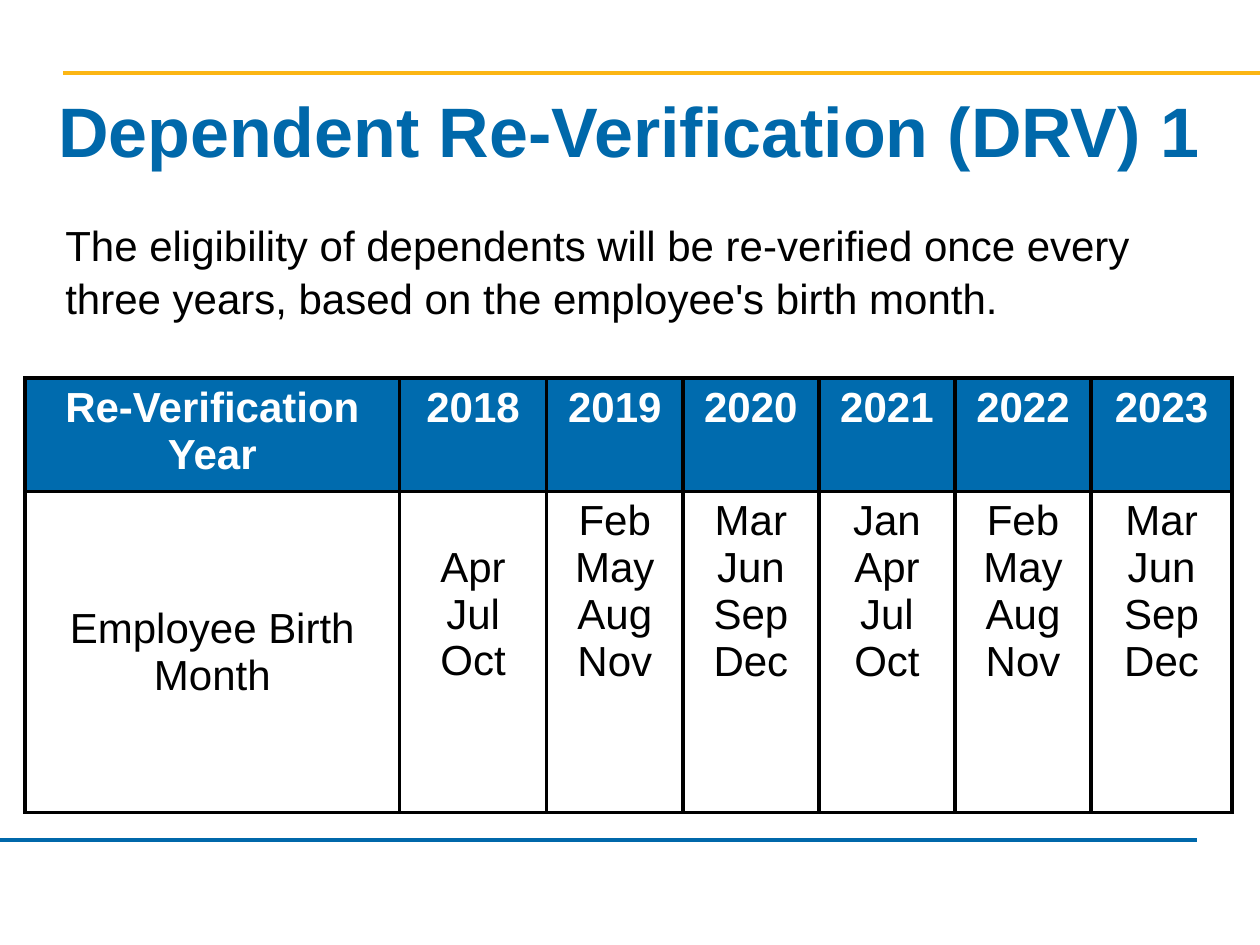
import pptx
import pptx.util
import pptx.dml.color
import pptx.enum.shapes
import pptx.enum.text
import pptx.oxml
import pptx.oxml.ns

GOLD = pptx.dml.color.RGBColor(0xFC, 0xB6, 0x14)
BLUE = pptx.dml.color.RGBColor(0x00, 0x68, 0xAA)
HEADER_BLUE = pptx.dml.color.RGBColor(0x00, 0x6B, 0xAE)
BLACK = pptx.dml.color.RGBColor(0x00, 0x00, 0x00)
WHITE = pptx.dml.color.RGBColor(0xFF, 0xFF, 0xFF)

FONT = "Arial"
WIDTH = pptx.util.Inches(10)
HEIGHT = pptx.util.Inches(7.5)
RULE = pptx.util.Pt(2.25)
CENTER = pptx.enum.text.PP_ALIGN.CENTER
LEFT = pptx.enum.text.PP_ALIGN.LEFT
MIDDLE = pptx.enum.text.MSO_ANCHOR.MIDDLE
TOP = pptx.enum.text.MSO_ANCHOR.TOP

YEARS = range(2018, 2024)
QUARTER_MONTHS = [
    ["Jan", "Apr", "Jul", "Oct"],
    ["Feb", "May", "Aug", "Nov"],
    ["Mar", "Jun", "Sep", "Dec"],
]
COLUMN_SHARES = [29.7, 11.7, 10.8, 10.8, 10.8, 10.8, 11.2]
ROW_SHARES = [11.33, 34]


def across(percent):
    return round(WIDTH * percent / 100)


def down(percent):
    return round(HEIGHT * percent / 100)


def place(left, top, width, height):
    return across(left), down(top), across(width), down(height)


def write(tf, text, size, color, bold=False, align=CENTER):
    tf.text = text
    for p in tf.paragraphs:
        p.alignment = align
        for r in p.runs:
            r.font.name = FONT
            r.font.size = pptx.util.Pt(size)
            r.font.bold = bold
            r.font.color.rgb = color


def add_rule(s, left, right, top, color):
    line = s.shapes.add_connector(
        pptx.enum.shapes.MSO_CONNECTOR.STRAIGHT,
        across(left), down(top), across(right), down(top))
    line.line.color.rgb = color
    line.line.width = RULE
    line._element.spPr.append(pptx.oxml.parse_xml(
        f"<a:effectLst {pptx.oxml.ns.nsdecls('a')}/>"))


def add_text(s, box, text, size, color, bold, align, anchor):
    tf = s.shapes.add_textbox(*place(*box)).text_frame
    tf.word_wrap = True
    tf.vertical_anchor = anchor
    write(tf, text, size, color, bold, align)
    return tf


def add_borders(cell):
    tcPr = cell._tc.get_or_add_tcPr()
    for i, side in enumerate(["lnL", "lnR", "lnT", "lnB"]):
        tcPr.insert(i, pptx.oxml.parse_xml(
            f'<a:{side} {pptx.oxml.ns.nsdecls("a")} w="{RULE}"><a:solidFill>'
            f'<a:srgbClr val="{BLACK}"/></a:solidFill></a:{side}>'))


def add_schedule(s, box):
    months = [QUARTER_MONTHS[i % 3] for i in range(len(YEARS))]
    months[0] = months[0][1:]
    rows = [
        ["Re-Verification Year"] + [str(year) for year in YEARS],
        ["Employee Birth Month"] + ["\n".join(names) for names in months],
    ]
    table = s.shapes.add_table(
        len(rows), len(COLUMN_SHARES), *place(*box)).table
    table.horz_banding = False
    for column, share in zip(table.columns, COLUMN_SHARES):
        column.width = across(share)
    for row, share in zip(table.rows, ROW_SHARES):
        row.height = down(share)
    for i, texts in enumerate(rows):
        header = i == 0
        for j, text in enumerate(texts):
            cell = table.cell(i, j)
            write(cell.text_frame, text, 24, WHITE if header else BLACK, header)
            if header:
                cell.fill.solid()
                cell.fill.fore_color.rgb = HEADER_BLUE
            else:
                cell.fill.background()
            add_borders(cell)
    table.cell(1, 0).vertical_anchor = MIDDLE
    table.cell(1, 1).margin_top = down(5.6)


def main():
    prs = pptx.Presentation()
    prs.slide_width = WIDTH
    prs.slide_height = HEIGHT
    s = prs.slides.add_slide(prs.slide_layouts[6])
    add_rule(s, 5, 100, 7.73, GOLD)
    add_rule(s, 0, 95, 88.93, BLUE)
    add_text(s, (2, 7.87, 95.8, 11.6), "Dependent Re-Verification (DRV) 1",
             40, BLUE, True, CENTER, MIDDLE)
    body = add_text(
        s, (4.2, 22.27, 91.7, 12.27),
        "The eligibility of dependents will be re-verified once every "
        "three years, based on the employee's birth month.",
        24, BLACK, False, LEFT, TOP)
    body.paragraphs[0].line_spacing = 1.05
    add_schedule(s, (2, 40, sum(COLUMN_SHARES), sum(ROW_SHARES)))
    prs.save("out.pptx")


if __name__ == "__main__":
    main()
